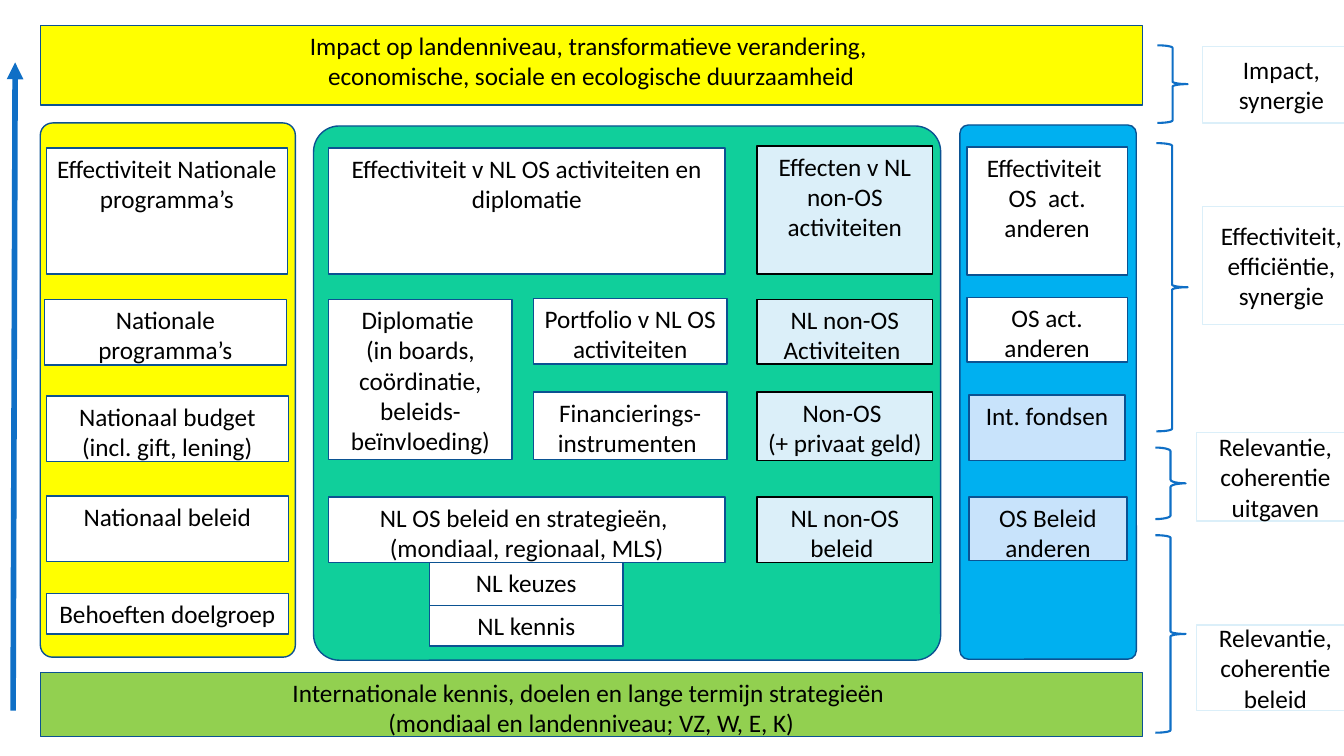
from lxml import etree
from pptx import Presentation
from pptx.dml.color import RGBColor
from pptx.enum import shapes, text
from pptx.oxml import ns
from pptx.util import Inches, Pt

WHITE = RGBColor(0xFF, 0xFF, 0xFF)
BLACK = RGBColor(0x00, 0x00, 0x00)
YELLOW = RGBColor(0xFF, 0xFF, 0x00)
GREEN = RGBColor(0x92, 0xD0, 0x50)
TEAL = RGBColor(0x10, 0xCF, 0x9B)
SKY = RGBColor(0x00, 0xB0, 0xF0)
PALE_BLUE = RGBColor(0xC8, 0xE3, 0xFB)
ICE = RGBColor(0xDB, 0xEF, 0xF9)
NAVY = RGBColor(0x0B, 0x52, 0x92)
BLUE = RGBColor(0x0F, 0x6F, 0xC6)

ROUNDING = 0.048
BOX = shapes.MSO_SHAPE.RECTANGLE


def add_outline(slide, kind, box, fill, line, width=1):
    """Add a preset shape in box (left, top, width, height)."""
    shape = slide.shapes.add_shape(kind, *map(Inches, box))
    shape.shadow.inherit = False
    if fill is None:
        shape.fill.background()
    else:
        shape.fill.solid()
        shape.fill.fore_color.rgb = fill
    shape.line.color.rgb = line
    shape.line.width = Pt(width)
    return shape


def add_label(slide, box, lines, fill=WHITE, line=NAVY,
              anchor=text.MSO_ANCHOR.TOP):
    """Add a rectangle with one centred paragraph for each line."""
    frame = add_outline(slide, BOX, box, fill, line).text_frame
    frame.word_wrap = True
    frame.vertical_anchor = anchor
    for index, words in enumerate(lines):
        paragraph = frame.paragraphs[0] if index == 0 else frame.add_paragraph()
        paragraph.alignment = text.PP_ALIGN.CENTER
        run = paragraph.add_run()
        run.text = words
        run.font.name = "Calibri"
        run.font.size = Pt(18)
        run.font.color.rgb = BLACK


def add_panel(slide, box, fill, labels):
    """Add a rounded panel; label boxes are offset from its corner."""
    left, top = box[:2]
    panel = add_outline(slide, shapes.MSO_SHAPE.ROUNDED_RECTANGLE, box, fill, NAVY)
    panel.adjustments[0] = ROUNDING
    for (x, y, width, height), lines, *colours in labels:
        add_label(slide, (left + x, top + y, width, height), lines, *colours)


def add_national_panel(slide, box):
    add_panel(slide, box, YELLOW, [
        ((0.06, 0.25, 2.39, 1.25), ["Effectiviteit Nationale programma’s"]),
        ((0.04, 1.75, 2.4, 0.65), ["Nationale programma’s"]),
        ((0.06, 2.71, 2.4, 0.65), ["Nationaal budget (incl. gift, lening)"]),
        ((0.06, 3.7, 2.4, 0.65), ["Nationaal beleid"]),
        ((0.06, 4.67, 2.4, 0.4), ["Behoeften doelgroep"]),
    ])


def add_dutch_panel(slide, box):
    wide, medium, narrow = 3.93, 1.92, 1.74
    first, second, middle, third = 0.15, 2.18, 1.15, 4.4
    add_panel(slide, box, TEAL, [
        # Development cooperation
        ((first, 0.22, wide, 1.25),
         ["Effectiviteit v NL OS activiteiten en diplomatie"]),
        ((first, 1.72, 1.82, 1.59),
         ["Diplomatie ", "(in boards, coördinatie, beleids-beïnvloeding)"]),
        ((second, 1.71, medium, 0.65), ["Portfolio v NL OS activiteiten"]),
        ((second, 2.64, medium, 0.67), ["Financierings-instrumenten "]),
        ((first, 3.68, wide, 0.65),
         ["NL OS beleid en strategieën, ", "(mondiaal, regionaal, MLS)"]),
        ((middle, 4.33, medium, 0.43), ["NL keuzes"]),
        ((middle, 4.76, medium, 0.4), ["NL kennis"]),
        # Other Dutch activities
        ((third, 0.2, narrow, 1.27),
         ["Effecten v NL non-OS activiteiten"], ICE, BLACK),
        ((third, 1.72, narrow, 0.64),
         ["NL non-OS Activiteiten "], ICE, BLACK),
        ((third, 2.64, narrow, 0.68),
         ["Non-OS ", "(+ privaat geld)"], ICE, BLACK),
        ((third, 3.68, narrow, 0.65), ["NL non-OS beleid "], ICE, BLACK),
    ])


def add_others_panel(slide, box):
    add_panel(slide, box, SKY, [
        ((0.07, 0.22, 1.59, 1.27), ["Effectiviteit ", "OS  act. anderen"]),
        ((0.07, 1.71, 1.59, 0.64), ["OS act. anderen"]),
        ((0.09, 2.68, 1.55, 0.65), ["Int. fondsen"], PALE_BLUE),
        ((0.09, 3.69, 1.57, 0.63), ["OS Beleid anderen"], PALE_BLUE),
    ])


def add_criterion(slide, box, label_box, words, curve=0.083):
    """Add a right brace in box with its criterion beside it."""
    brace = add_outline(slide, shapes.MSO_SHAPE.RIGHT_BRACE, box, None, BLUE, 1.5)
    brace.adjustments[0] = curve
    x, y, width, height = label_box
    add_label(slide, (box[0] + x, box[1] + y, width, height), [words],
              None, ICE, text.MSO_ANCHOR.MIDDLE)


def add_upward_arrow(slide, start, end):
    arrow = slide.shapes.add_connector(
        shapes.MSO_CONNECTOR.STRAIGHT, *map(Inches, start + end))
    arrow.line.color.rgb = BLUE
    arrow.line.width = Pt(4)
    etree.SubElement(arrow.line._get_or_add_ln(), ns.qn("a:tailEnd"),
                     type="triangle")
    etree.SubElement(arrow._element.spPr, ns.qn("a:effectLst"))


def main():
    presentation = Presentation()
    presentation.slide_width = Inches(13.33)
    presentation.slide_height = Inches(7.5)
    slide = presentation.slides.add_slide(presentation.slide_layouts[6])

    # Three panels
    add_national_panel(slide, (0.4, 1.22, 2.53, 5.3))
    add_others_panel(slide, (9.52, 1.24, 1.75, 5.3))
    add_dutch_panel(slide, (3.11, 1.25, 6.22, 5.3))

    # Bands above and below the panels
    add_label(slide, (0.4, 0.25, 10.93, 0.79),
              ["Impact op landenniveau, transformatieve verandering, ",
               "economische, sociale en ecologische duurzaamheid"], YELLOW)
    add_label(slide, (0.4, 6.67, 10.93, 0.64),
              ["Internationale kennis, doelen en lange termijn strategieën ",
               "(mondiaal en landenniveau; VZ, W, E, K)"], GREEN)

    # Evaluation criteria
    add_criterion(slide, (11.48, 0.45, 0.3, 0.77), (0.45, 0.01, 1.56, 0.76),
                  "Impact, synergie")
    add_criterion(slide, (11.47, 1.42, 0.31, 2.86), (0.46, 0.63, 1.56, 1.17),
                  "Effectiviteit, efficiëntie, synergie")
    add_criterion(slide, (11.46, 4.44, 0.3, 0.71), (0.41, -0.15, 1.56, 0.88),
                  "Relevantie, coherentie uitgaven", 0.12)
    add_criterion(slide, (11.46, 5.31, 0.3, 1.96), (0.41, 0.89, 1.56, 0.85),
                  "Relevantie, coherentie beleid")

    add_upward_arrow(slide, (0.13, 7.05), (0.15, 0.62))
    presentation.save("out.pptx")


if __name__ == "__main__":
    main()
